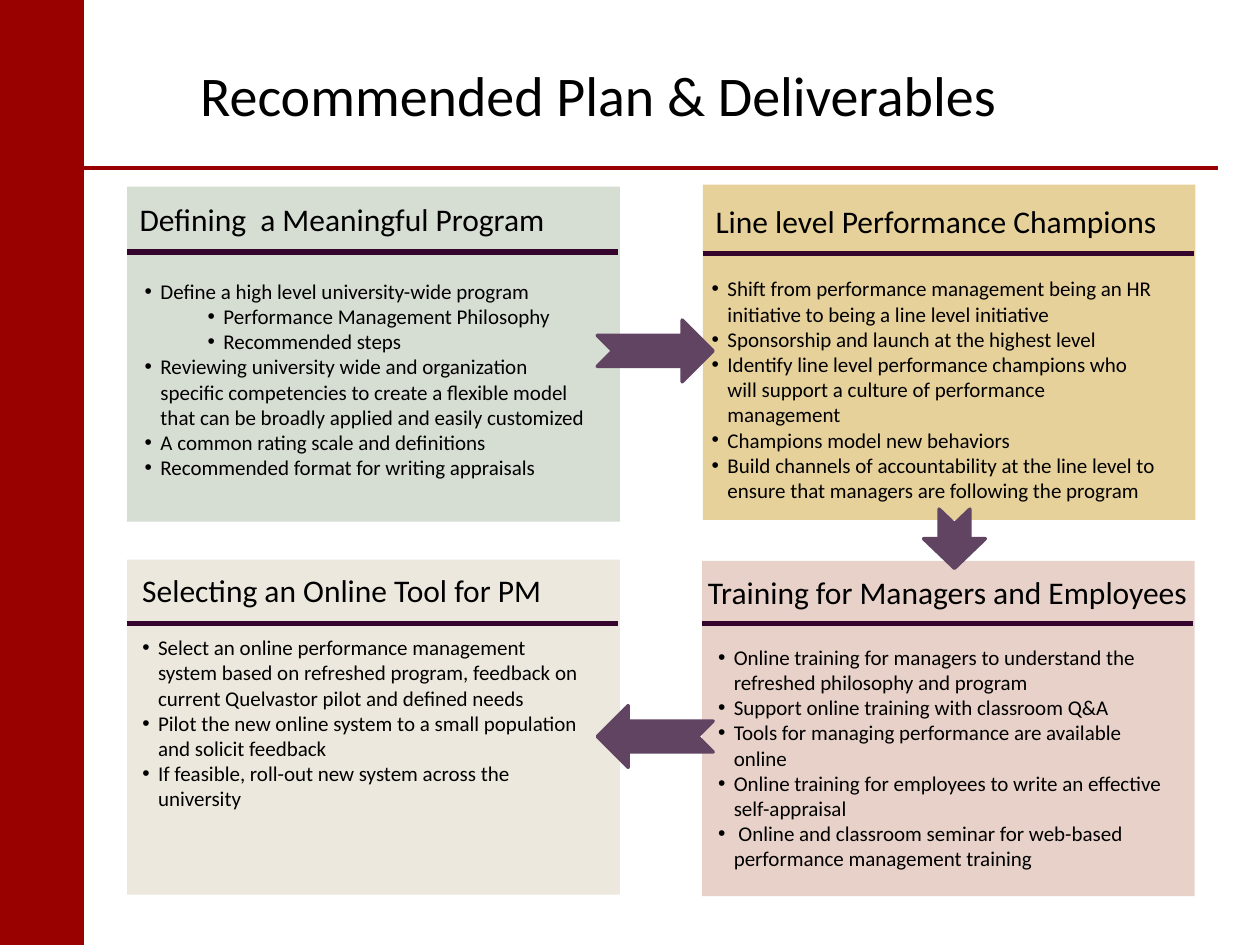
"""Build the slide on the recommended plan and its deliverables."""
from lxml.etree import SubElement
from pptx import Presentation
from pptx.dml.color import RGBColor
from pptx.enum.shapes import MSO_CONNECTOR as Connector, MSO_SHAPE as Shape
from pptx.enum.text import MSO_ANCHOR as Anchor, PP_ALIGN as Align
from pptx.oxml.ns import qn
from pptx.util import Pt

RED = RGBColor(0x99, 0x00, 0x00)
BLACK = RGBColor(0x00, 0x00, 0x00)
PLUM = RGBColor(0x36, 0x05, 0x2E)
MAUVE = RGBColor(0x61, 0x43, 0x62)
SAGE = RGBColor(0xD6, 0xDD, 0xD3)
GOLD = RGBColor(0xE7, 0xD1, 0x9A)
ROSE = RGBColor(0xE7, 0xD1, 0xC8)
CREAM = RGBColor(0xED, 0xE8, 0xDD)

PANEL_WIDTH, PANEL_HEIGHT = 281.5, 191.5
HEADING_HEIGHT = 29
LIST_WIDTH = 269.5
HANG, LEVEL_STEP = 9, 36

PANELS = [
    {"fill": SAGE, "corner": (72.7, 106.6), "rule": 144,
     "heading": "Defining  a Meaningful Program", "heading_at": (72.7, 110.9),
     "list_at": (75.6, 155.5),
     "items": [
         (0, "Define a high level university-wide program"),
         (1, "Performance Management Philosophy"),
         (1, "Recommended steps"),
         (0, "Reviewing university wide and organization specific competencies to "
             "create a flexible model that can be broadly applied and easily customized"),
         (0, "A common rating scale and definitions"),
         (0, "Recommended format for writing appraisals")]},
    {"fill": GOLD, "corner": (401.6, 105.6), "rule": 144.7,
     "heading": "Line level Performance Champions", "heading_at": (401.8, 111.6),
     "list_at": (399.6, 154.1),
     "items": [
         (0, "Shift from performance management being an HR initiative to being "
             "a line level initiative"),
         (0, "Sponsorship and launch at the highest level"),
         (0, "Identify line level performance champions who will support a culture "
             "of performance management"),
         (0, "Champions model new behaviors"),
         (0, "Build channels of accountability at the line level to ensure that "
             "managers are following the program")]},
    {"fill": ROSE, "corner": (401.2, 320.6), "rule": 356.5,
     "heading": "Training for Managers and Employees", "heading_at": (397.4, 324),
     "list_at": (403.2, 364.6),
     "items": [
         (0, "Online training for managers to understand the refreshed philosophy "
             "and program"),
         (0, "Support online training with classroom Q&A"),
         (0, "Tools for managing performance are available online"),
         (0, "Online training for employees to write an effective self-appraisal"),
         (0, " Online and classroom seminar for web-based performance management "
             "training")]},
    {"fill": CREAM, "corner": (72.7, 319.8), "rule": 356.5,
     "heading": "Selecting an Online Tool for PM", "heading_at": (74.2, 322.6),
     "list_at": (74.2, 359.2),
     "items": [
         (0, "Select an online performance management system based on refreshed "
             "program, feedback on current Quelvastor pilot and defined needs"),
         (0, "Pilot the new online system to a small population and solicit feedback"),
         (0, "If feasible, roll-out new system across the university")]},
]

ARROWS = [(341.3, 182.9, 66.2, 35.3, 0),
          (528.5, 290.2, 33.8, 35.3, 90),
          (341.3, 403.2, 66.2, 35.3, 180)]


class PlanSlide:
    """Hold the text style and the slide being drawn."""

    def __init__(self, slide, font="Calibri", color=BLACK):
        self.slide = slide
        self.font = font
        self.color = color

    def style(self, paragraph, size):
        for span in paragraph.runs:
            span.font.name = self.font
            span.font.size = Pt(size)
            span.font.color.rgb = self.color

    def title(self, text, left, top, width, height):
        box = self.slide.shapes.title
        box.left, box.top, box.width, box.height = map(Pt, (left, top, width, height))
        frame = box.text_frame
        frame.text = text
        frame.vertical_anchor = Anchor.MIDDLE
        frame.paragraphs[0].alignment = Align.CENTER
        self.style(frame.paragraphs[0], 32)

    def shape(self, kind, left, top, width, height, fill):
        shape = self.slide.shapes.add_shape(kind, *map(Pt, (left, top, width, height)))
        shape.shadow.inherit = False
        shape.fill.solid()
        shape.fill.fore_color.rgb = fill
        shape.line.fill.background()
        return shape

    def rule(self, left, right, y, color, weight):
        line = self.slide.shapes.add_connector(
            Connector.STRAIGHT, Pt(left), Pt(y), Pt(right), Pt(y))
        line.line.color.rgb = color
        line.line.width = Pt(weight)
        SubElement(line._element.spPr, qn("a:effectLst"))

    def arrow(self, left, top, width, height, rotation):
        arrow = self.shape(Shape.NOTCHED_RIGHT_ARROW, left, top, width, height, MAUVE)
        arrow.line.color.rgb = MAUVE
        arrow.line.width = Pt(2)
        arrow.rotation = rotation

    def text_box(self, text, left, top, width, height, size):
        box = self.slide.shapes.add_textbox(*map(Pt, (left, top, width, height)))
        frame = box.text_frame
        frame.word_wrap = True
        frame.text = text
        for paragraph in frame.paragraphs:
            self.style(paragraph, size)
        return frame

    def bullets(self, items, left, top, height):
        text = "\n".join(item for _, item in items)
        frame = self.text_box(text, left, top, LIST_WIDTH, height, 12)
        for paragraph, (level, _) in zip(frame.paragraphs, items):
            paragraph.level = level
            properties = paragraph._p.get_or_add_pPr()
            properties.set("marL", str(Pt(HANG + LEVEL_STEP * level)))
            properties.set("indent", str(-Pt(HANG)))
            SubElement(properties, qn("a:buFont"), typeface="Arial")
            SubElement(properties, qn("a:buChar"), char="•")

    def panel(self, fill, corner, rule, heading, heading_at, list_at, items):
        left, top = corner
        self.shape(Shape.RECTANGLE, left, top, PANEL_WIDTH, PANEL_HEIGHT, fill)
        self.rule(left, left + PANEL_WIDTH - 1, rule, PLUM, 3)
        self.text_box(heading, *heading_at, PANEL_WIDTH + 18, HEADING_HEIGHT, 18)
        self.bullets(items, *list_at, top + PANEL_HEIGHT - list_at[1])


def main():
    deck = Presentation()
    deck.slide_width, deck.slide_height = Pt(720), Pt(540)
    page = PlanSlide(deck.slides.add_slide(deck.slide_layouts[5]))
    page.shape(Shape.RECTANGLE, 0, 0, 48, 540, RED)
    page.rule(48, 696, 96, RED, 2.25)
    page.title("Recommended Plan & Deliverables", 54, 12, 576, 84)
    for panel in PANELS:
        page.panel(**panel)
    for arrow in ARROWS:
        page.arrow(*arrow)
    deck.save("out.pptx")


if __name__ == "__main__":
    main()
